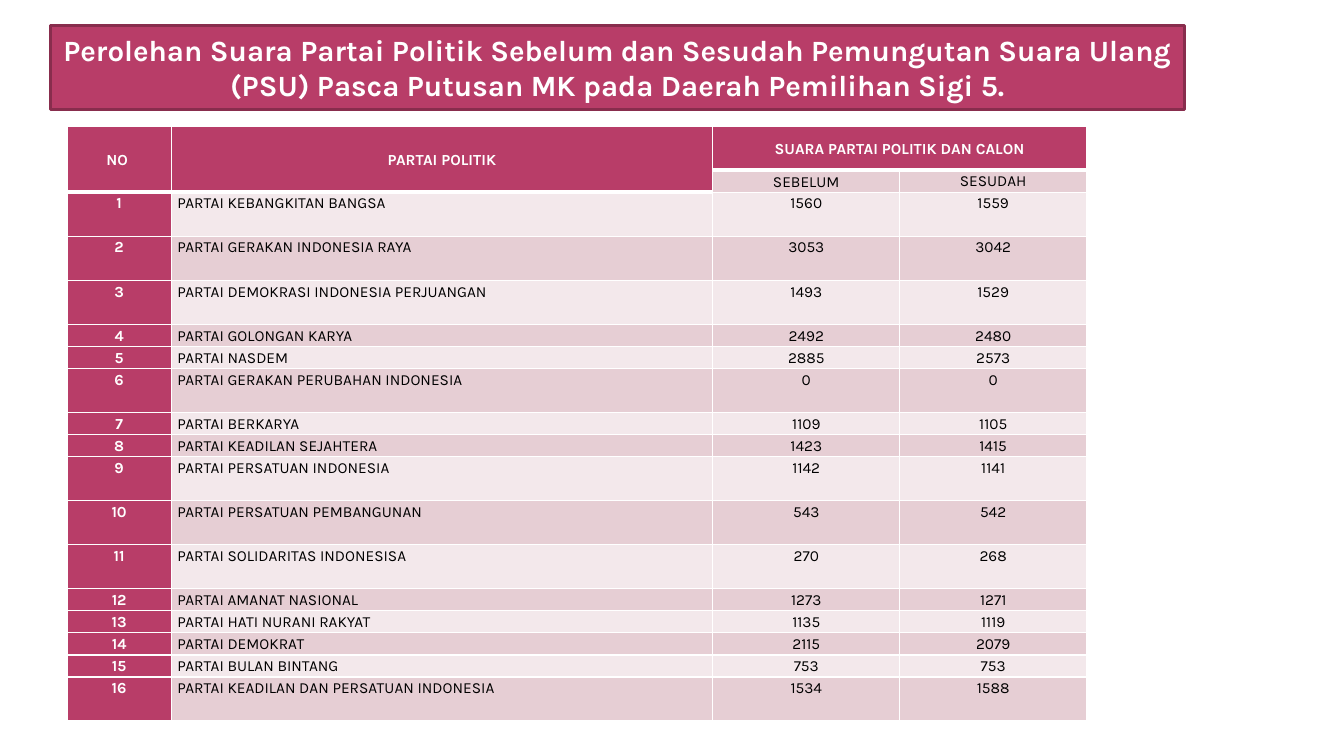
from lxml.etree import SubElement as Sub
from pptx import Presentation
from pptx.dml.color import RGBColor as Rgb
from pptx.enum.text import MSO_ANCHOR as Anchor, PP_ALIGN as Align
from pptx.oxml.ns import qn
from pptx.util import Pt

SCALE = 9525
FONT = "Karla"
ROSE, EDGE, WHITE, BLACK = "B83D68", "882D4D", "FFFFFF", "000000"
BANDS = "E6CED4", "F3E8EB"
SHORT, TALL = 21, 42
COLS = 99, 516, 178, 178
TITLE = (
    "Perolehan Suara Partai Politik Sebelum dan Sesudah Pemungutan Suara "
    "Ulang (PSU) Pasca Putusan MK pada Daerah Pemilihan Sigi 5."
)
HEAD = [
    ("NO ", "PARTAI POLITIK", "SUARA PARTAI POLITIK DAN CALON", ""),
    ("", "", "SEBELUM", "SESUDAH"),
]
VOTES = [
    ("PARTAI KEBANGKITAN BANGSA", 1560, 1559, TALL),
    ("PARTAI GERAKAN INDONESIA RAYA", 3053, 3042, TALL),
    ("PARTAI DEMOKRASI INDONESIA PERJUANGAN", 1493, 1529, TALL),
    ("PARTAI GOLONGAN KARYA", 2492, 2480, SHORT),
    ("PARTAI NASDEM", 2885, 2573, SHORT),
    ("PARTAI GERAKAN PERUBAHAN INDONESIA", 0, 0, TALL),
    ("PARTAI BERKARYA", 1109, 1105, SHORT),
    ("PARTAI KEADILAN SEJAHTERA", 1423, 1415, SHORT),
    ("PARTAI PERSATUAN INDONESIA", 1142, 1141, TALL),
    ("PARTAI PERSATUAN PEMBANGUNAN", 543, 542, TALL),
    ("PARTAI SOLIDARITAS INDONESISA", 270, 268, TALL),
    ("PARTAI AMANAT NASIONAL", 1273, 1271, SHORT),
    ("PARTAI HATI NURANI RAKYAT", 1135, 1119, SHORT),
    ("PARTAI DEMOKRAT", 2115, 2079, SHORT),
    ("PARTAI BULAN BINTANG", 753, 753, SHORT),
    ("PARTAI KEADILAN DAN PERSATUAN INDONESIA", 1534, 1588, TALL),
]


def px(count):
    return count * SCALE


def paint(part, color):
    part.solid()
    part.fore_color.rgb = Rgb.from_string(color)


class Deck:
    """Slide builder that holds the shared style and the current slide."""

    def __init__(self, wide, high):
        self.show = Presentation()
        self.show.slide_width, self.show.slide_height = px(wide), px(high)
        self.slide = self.show.slides.add_slide(self.show.slide_layouts[5])

    def label(self, para, text, size, color, bold, align):
        para.text = text
        para.alignment = align
        font = para.font
        font.name, font.size, font.bold = FONT, Pt(size), bold
        font.color.rgb = Rgb.from_string(color)

    def title(self, text, left, top, wide, high):
        box = self.slide.shapes.title
        box.left, box.top, box.width, box.height = map(px, (left, top, wide, high))
        shape = Sub(box.element.spPr, qn("a:prstGeom"), prst="roundRect")
        Sub(shape, qn("a:avLst"))
        paint(box.fill, ROSE)
        paint(box.line.fill, EDGE)
        box.line.width = Pt(2)
        frame = box.text_frame
        frame.word_wrap = True
        frame.vertical_anchor = Anchor.MIDDLE
        self.label(frame.paragraphs[0], text, 21, WHITE, True, Align.CENTER)

    def border(self, cell, base):
        props = cell._tc.get_or_add_tcPr()
        for side, width in zip("LRTB", (1, 1, 1, base)):
            line = Sub(props, qn(f"a:ln{side}"), w=str(Pt(width)))
            fill = Sub(line, qn("a:solidFill"))
            Sub(fill, qn("a:srgbClr"), val=WHITE)

    def cell(self, cell, text, fill, strong, align, middle, base):
        self.border(cell, base)
        paint(cell.fill, fill)
        cell.margin_left = cell.margin_right = px(6)
        cell.margin_top = cell.margin_bottom = 0
        cell.vertical_anchor = Anchor.MIDDLE if middle else Anchor.TOP
        para = cell.text_frame.paragraphs[0]
        self.label(para, text, 11, WHITE if strong else BLACK, strong, align)
        para.line_spacing = 1.15

    def table(self, rows, highs, left, top):
        size = map(px, (left, top, sum(COLS), sum(highs)))
        grid = self.slide.shapes.add_table(len(rows), len(COLS), *size).table
        for col, wide in zip(grid.columns, COLS):
            col.width = px(wide)
        for row, high in zip(grid.rows, highs):
            row.height = px(high)
        for y, row in enumerate(rows):
            for x, text in enumerate(row):
                head = y == 0 or (y == 1 and x < 2)
                strong = head or x == 0
                fill = ROSE if strong else BANDS[(y + 1) % 2]
                align = Align.LEFT if x == 1 and y > 1 else Align.CENTER
                middle = head or (y == 1 and x == 2)
                base = 3 if head else 1
                self.cell(grid.cell(y, x), text, fill, strong, align, middle, base)
        for start, end in (((0, 0), (1, 0)), ((0, 1), (1, 1)), ((0, 2), (0, 3))):
            grid.cell(*start).merge(grid.cell(*end))


def main():
    deck = Deck(1280, 720)
    deck.title(TITLE, 48, 24, 1080, 80)
    body = [
        (str(rank), party, str(before), str(after))
        for rank, (party, before, after, _) in enumerate(VOTES, 1)
    ]
    highs = [TALL, SHORT] + [vote[-1] for vote in VOTES]
    deck.table(HEAD + body, highs, 64, 120)
    deck.show.save("out.pptx")


if __name__ == "__main__":
    main()
